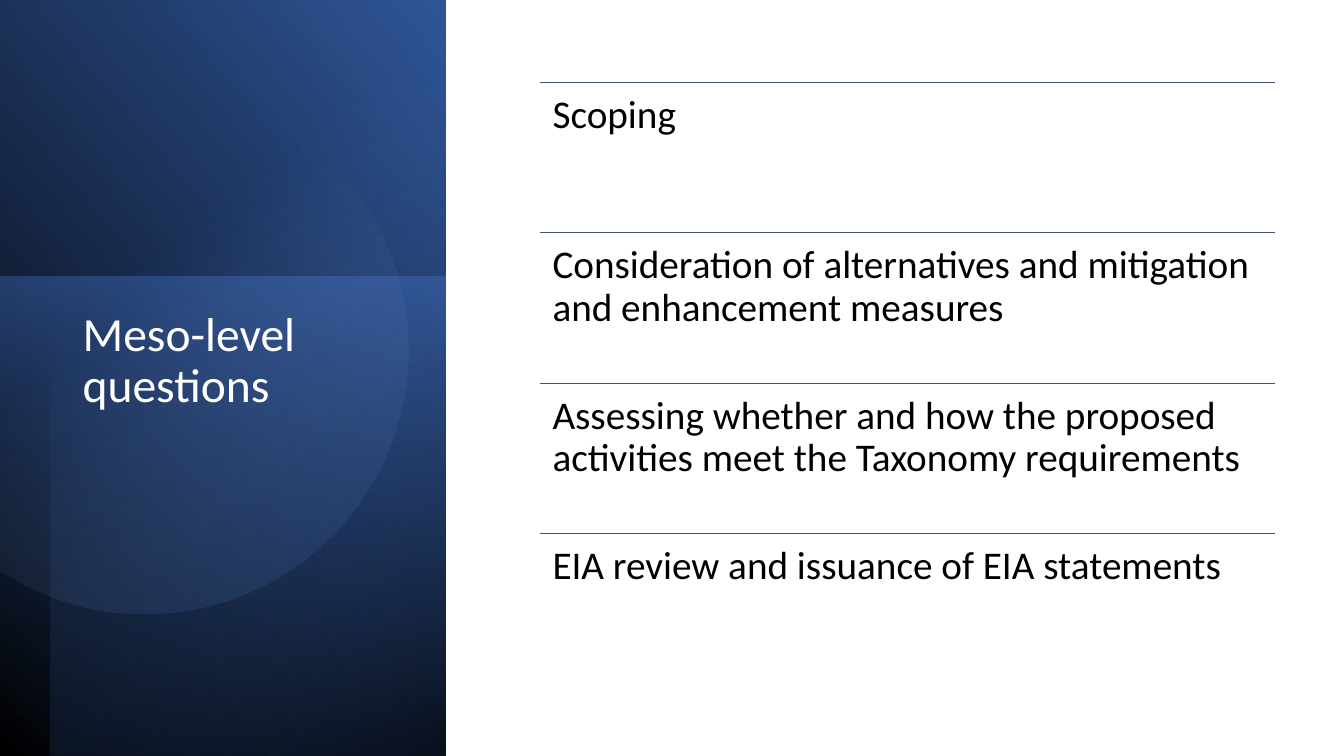
"""Build the slide of meso-level questions beside a shaded blue panel."""
import math
import pptx
import pptx.util
import pptx.oxml
import pptx.oxml.ns
import pptx.dml.color
import pptx.enum.shapes
import pptx.enum.text

PX = 9144
FONT = "Calibri"
RECT = pptx.enum.shapes.MSO_SHAPE.RECTANGLE
LINE = pptx.enum.shapes.MSO_CONNECTOR.STRAIGHT
NS = pptx.oxml.ns.nsdecls("a")


def shade(shape, stops, angle):
    """Fill a shape with a gradient of (place, hex, opacity) stops."""
    shape.shadow.inherit = False
    shape.line.fill.background()
    marks = "".join(
        f'<a:gs pos="{at * 1000}"><a:srgbClr val="{tint}">'
        f'<a:alpha val="{alpha * 1000}"/></a:srgbClr></a:gs>'
        for at, tint, alpha in stops)
    grad = pptx.oxml.parse_xml(
        f'<a:gradFill {NS} rotWithShape="1"><a:gsLst>{marks}</a:gsLst>'
        f'<a:lin ang="{angle * 60000}" scaled="0"/></a:gradFill>')
    props = shape.element.spPr
    props.find(pptx.oxml.ns.qn("a:ln")).addprevious(grad)


def write(shape, text, size, tint, inset):
    """Put one left-aligned line of text at the top of a shape."""
    frame = shape.text_frame
    frame.text = text
    para = frame.paragraphs[0]
    across, down = (gap * PX for gap in inset)
    looks = [
        (frame, {"word_wrap": True,
                 "auto_size": pptx.enum.text.MSO_AUTO_SIZE.NONE,
                 "vertical_anchor": pptx.enum.text.MSO_ANCHOR.TOP,
                 "margin_left": across, "margin_right": across,
                 "margin_top": down, "margin_bottom": down}),
        (para, {"alignment": pptx.enum.text.PP_ALIGN.LEFT,
                "line_spacing": 0.9}),
        (para.runs[0].font, {"name": FONT, "size": pptx.util.Pt(size)}),
    ]
    for target, look in looks:
        for name, value in look.items():
            setattr(target, name, value)
    para.runs[0].font.color.rgb = pptx.dml.color.RGBColor.from_string(tint)


deck = pptx.Presentation()
deck.slide_width, deck.slide_height = 1333 * PX, 750 * PX
slide = deck.slides.add_slide(deck.slide_layouts[5])
shapes = slide.shapes

panels = [
    ((-155, 155, 752, 442), 90, True,
     [(0, "000000", 100), (100, "2F5597", 100)], 310),
    ((-17, 291, 476, 442), 270, False,
     [(0, "4472C4", 50), (100, "203864", 0)], 190),
    ((-129, 179, 750, 392), 270, True,
     [(0, "000000", 59), (69, "4472C4", 0)], 220),
]
for box, turn, flip, stops, angle in panels:
    panel = shapes.add_shape(RECT, *(side * PX for side in box))
    panel.rotation = turn
    if flip:
        panel.element.spPr.xfrm.set("flipH", "1")
    shade(panel, stops, angle)

mid_x, mid_y, radius = 143, 347, 262
reach = math.acos(-mid_x / radius)
steps = 120
points = []
for step in range(steps + 1):
    turn = reach * (2 * step / steps - 1)
    points.append((round((mid_x + radius * math.cos(turn)) * PX),
                   round((mid_y + radius * math.sin(turn)) * PX)))
pen = shapes.build_freeform(*points[0])
pen.add_line_segments(points[1:], close=True)
shade(pen.convert_to_shape(), [(39, "8FAADC", 0), (100, "2F5597", 26)], 52)

title = shapes.title
title.left, title.top, title.width, title.height = (
    side * PX for side in (72, 303, 315, 336))
write(title, "Meso-level questions", 34, "FFFFFF", (10, 5))
title.element.getparent().append(title.element)

topics = [
    "Scoping",
    "Consideration of alternatives and mitigation and enhancement measures",
    "Assessing whether and how the proposed activities meet the Taxonomy requirements",
    "EIA review and issuance of EIA statements",
]
left, top, width, pitch = 536, 82, 729, 149
for row, topic in enumerate(topics):
    y = top + row * pitch
    rule = shapes.add_connector(
        LINE, left * PX, y * PX, (left + width) * PX, y * PX)
    rule.line.width = pptx.util.Pt(0.5)
    rule.line.color.rgb = pptx.dml.color.RGBColor.from_string("44546A")
    rule.element.spPr.append(pptx.oxml.parse_xml(f"<a:effectLst {NS}/>"))
    label = shapes.add_textbox(left * PX, y * PX, width * PX, pitch * PX)
    write(label, topic, 28, "000000", (12, 12))

deck.save("out.pptx")
